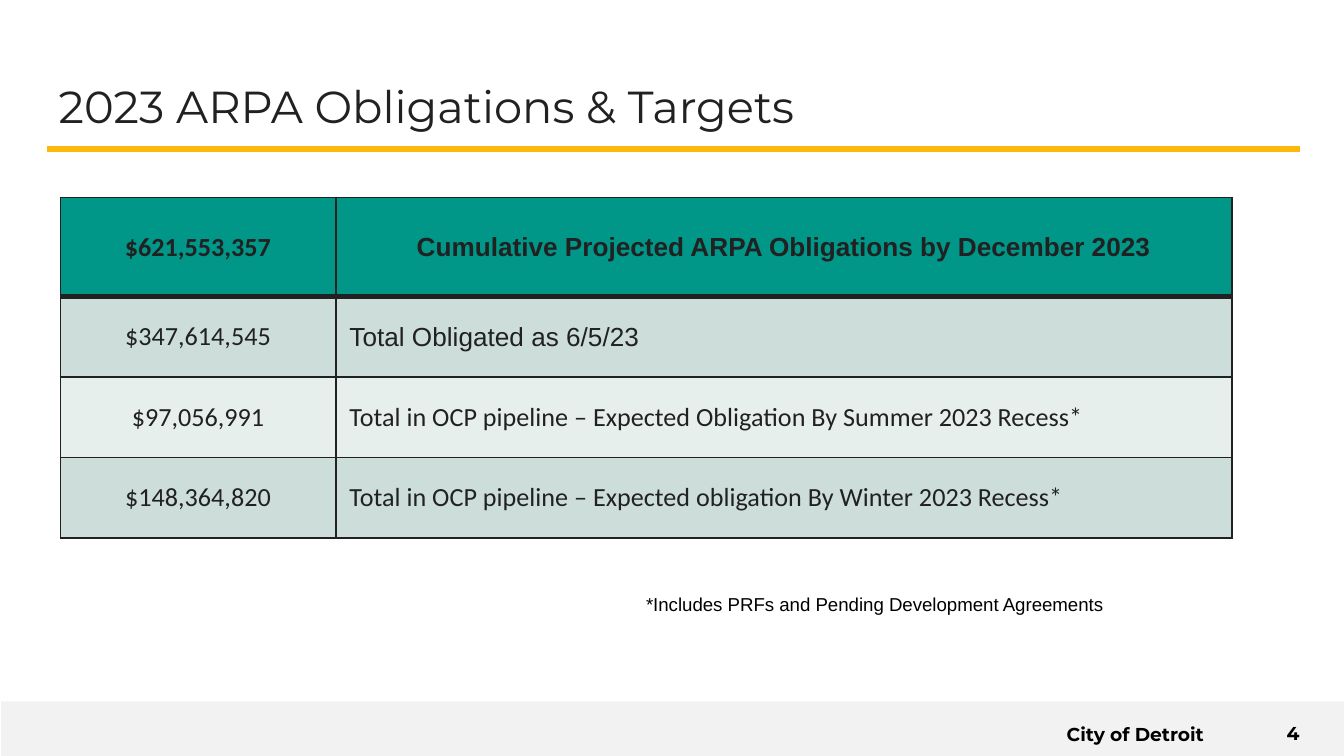
from lxml import etree
from pptx import Presentation
from pptx.dml.color import RGBColor
from pptx.enum.shapes import MSO_CONNECTOR, MSO_SHAPE
from pptx.enum.text import MSO_ANCHOR, MSO_AUTO_SIZE, PP_ALIGN
from pptx.oxml.ns import qn
from pptx.util import Cm, Pt

LEFT, CENTER, RIGHT = PP_ALIGN.LEFT, PP_ALIGN.CENTER, PP_ALIGN.RIGHT
TOP, MIDDLE = MSO_ANCHOR.TOP, MSO_ANCHOR.MIDDLE
RECTANGLE, STRAIGHT = MSO_SHAPE.RECTANGLE, MSO_CONNECTOR.STRAIGHT
NO_AUTOFIT = MSO_AUTO_SIZE.NONE
TITLE_ONLY = 5

INK, BLACK, GOLD, FOOTER_GRAY = "212121", "000000", "FEB70D", "F2F2F2"
TEAL, BAND_DARK, BAND_LIGHT = "009688", "CCDDDA", "E7EFED"

# Amount, description, description font
OBLIGATIONS = [
    ("$621,553,357", "Cumulative Projected ARPA Obligations by December 2023", "Arial"),
    ("$347,614,545", "Total Obligated as 6/5/23", "Arial"),
    ("$97,056,991", "Total in OCP pipeline – Expected Obligation By Summer 2023 Recess*", "Calibri"),
    ("$148,364,820", "Total in OCP pipeline – Expected obligation By Winter 2023 Recess*", "Calibri"),
]
COLUMN_WIDTHS = [5.21, 16.93]
HEADER_HEIGHT, ROW_HEIGHT = 1.88, 1.52


def color(value):
    return RGBColor.from_string(value)


def write(frame, text, font, size, ink, align=LEFT, bold=False):
    frame.text = text
    para = frame.paragraphs[0]
    para.alignment = align
    for span in para.runs:
        span.font.name = font
        span.font.size = Pt(size)
        span.font.bold = bold
        span.font.color.rgb = color(ink)


def set_frame(frame, anchor, margin_x=0.25, margin_y=0.25):
    frame.word_wrap = True
    frame.auto_size = NO_AUTOFIT
    frame.vertical_anchor = anchor
    frame.margin_left = frame.margin_right = Cm(margin_x)
    frame.margin_top = frame.margin_bottom = Cm(margin_y)


def add_label(page, text, left, top, width, height, anchor=TOP, margin_y=0.25, **style):
    box = page.shapes.add_textbox(Cm(left), Cm(top), Cm(width), Cm(height))
    set_frame(box.text_frame, anchor, margin_y=margin_y)
    write(box.text_frame, text, size=10, ink=BLACK, **style)


def add_bar(page, left, top, width, height, fill):
    bar = page.shapes.add_shape(RECTANGLE, Cm(left), Cm(top), Cm(width), Cm(height))
    bar.shadow.inherit = False
    bar.fill.solid()
    bar.fill.fore_color.rgb = color(fill)
    bar.line.fill.background()


def add_rule(page, left, right, top, ink, weight):
    rule = page.shapes.add_connector(STRAIGHT, Cm(left), Cm(top), Cm(right), Cm(top))
    rule.line.color.rgb = color(ink)
    rule.line.width = Pt(weight)
    etree.SubElement(rule._element.spPr, qn("a:effectLst"))


def set_title(page, text):
    title = page.shapes.title
    title.left, title.top, title.width, title.height = Cm(0.86), Cm(1.24), Cm(23.67), Cm(1.6)
    set_frame(title.text_frame, TOP)
    write(title.text_frame, text, "Montserrat", 24, INK)


def set_borders(cell, top, bottom):
    properties = cell._tc.get_or_add_tcPr()
    for side, weight in (("L", 1), ("R", 1), ("T", top), ("B", bottom)):
        border = etree.SubElement(properties, qn(f"a:ln{side}"), w=str(Pt(weight)))
        fill = etree.SubElement(border, qn("a:solidFill"))
        etree.SubElement(fill, qn("a:srgbClr"), val=INK)


def add_obligations_table(page, left, top):
    heights = [HEADER_HEIGHT] + [ROW_HEIGHT] * (len(OBLIGATIONS) - 1)
    table = page.shapes.add_table(
        len(heights), len(COLUMN_WIDTHS),
        Cm(left), Cm(top), Cm(sum(COLUMN_WIDTHS)), Cm(sum(heights)),
    ).table
    table.first_row = table.horz_banding = False
    for column, width in zip(table.columns, COLUMN_WIDTHS):
        column.width = Cm(width)

    for index, (amount, description, font) in enumerate(OBLIGATIONS):
        table.rows[index].height = Cm(heights[index])
        header = index == 0
        fill = TEAL if header else (BAND_LIGHT, BAND_DARK)[index % 2]
        contents = [
            (amount, "Calibri", CENTER),
            (description, font, CENTER if header else LEFT),
        ]
        for cell, (text, face, align) in zip(table.rows[index].cells, contents):
            # A heavy line separates the header from the body
            set_borders(cell, top=3 if index == 1 else 1, bottom=3 if header else 1)
            cell.fill.solid()
            cell.fill.fore_color.rgb = color(fill)
            cell.vertical_anchor = MIDDLE
            write(cell.text_frame, text, face, 14, INK, align, bold=header)


def main():
    deck = Presentation()
    deck.slide_width, deck.slide_height = Cm(25.4), Cm(14.29)
    page = deck.slides.add_slide(deck.slide_layouts[TITLE_ONLY])

    # Footer
    add_bar(page, 0.02, 13.26, 25.4, 1.03, FOOTER_GRAY)
    footer = {"font": "Montserrat", "align": RIGHT, "bold": True}
    add_label(page, "City of Detroit", 16, 13.41, 7, 0.91, **footer)
    add_label(page, "4", 23.57, 13.46, 1.24, 0.81, anchor=MIDDLE, **footer)

    # Heading
    add_rule(page, 0.89, 24.56, 2.82, GOLD, 3)
    set_title(page, "2023 ARPA Obligations & Targets")

    # Body
    add_obligations_table(page, 1.14, 3.73)
    add_label(page, "*Includes PRFs and Pending Development Agreements",
              11.96, 11.07, 10.87, 0.69, margin_y=0.13, font="Arial")

    deck.save("out.pptx")


if __name__ == "__main__":
    main()
